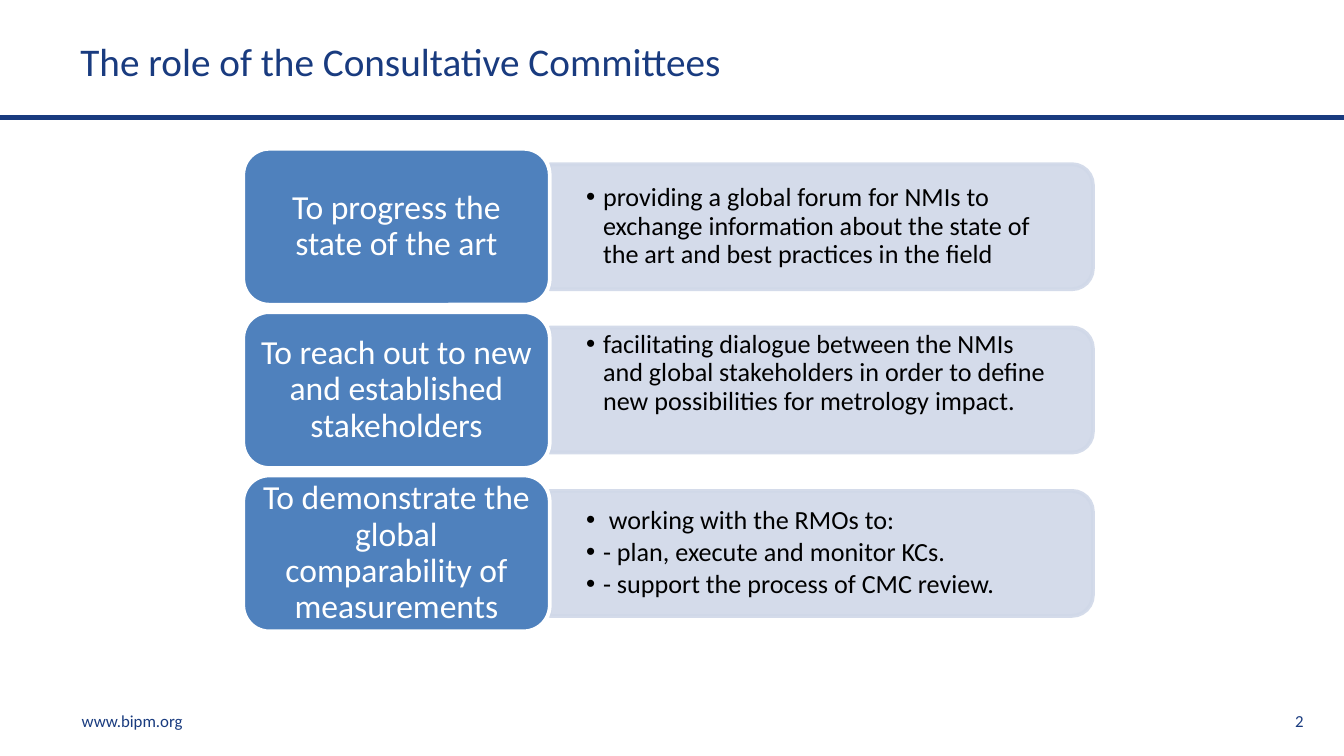
from lxml import etree
from pptx import Presentation
from pptx.dml.color import RGBColor
from pptx.enum import shapes, text
from pptx.oxml import ns
from pptx.util import Pt

NAVY = RGBColor(0x19, 0x3B, 0x7F)
BLUE = RGBColor(0x4F, 0x81, 0xBD)
PALE = RGBColor(0xD0, 0xD8, 0xE8)
WHITE = RGBColor(0xFF, 0xFF, 0xFF)
BLACK = RGBColor(0x00, 0x00, 0x00)

LEFT, CENTER, RIGHT = text.PP_ALIGN.LEFT, text.PP_ALIGN.CENTER, text.PP_ALIGN.RIGHT
DEFAULT_INSETS = (7.2, 3.6, 7.2, 3.6)
DETAIL_INSETS = (19.6, 10, 19.6, 10)
RAISED_INSETS = (19.6, 0, 19.6, 18)

ROWS = [
    ("To progress the state of the art",
     ["providing a global forum for NMIs to exchange information about "
      "the state of the art and best practices in the field"],
     DETAIL_INSETS),
    ("To reach out to new and established stakeholders",
     ["facilitating dialogue between the NMIs and global stakeholders "
      "in order to define new possibilities for metrology impact."],
     RAISED_INSETS),
    ("To demonstrate the global comparability of measurements",
     [" working with the RMOs to:",
      "- plan, execute and monitor KCs.",
      "- support the process of CMC review."],
     DETAIL_INSETS),
]
FIRST_CENTER, ROW_PITCH = 121.5, 87.5
HEAD_LEFT, HEAD_WIDTH, HEAD_HEIGHT = 130.3, 164.2, 83.5
HEAD_PADDING = 4.1
PANEL_LEFT, PANEL_WIDTH, PANEL_HEIGHT = 294.5, 291, 67
DETAIL_WIDTH, DETAIL_HEIGHT = 288, 60.5


def add_element(parent, tag, **attributes):
    return etree.SubElement(parent, ns.qn(tag), attributes)


class Deck:
    font = "Calibri"

    def __init__(self, slide):
        self.slide = slide

    def rule(self, y, width):
        line = self.slide.shapes.add_connector(
            shapes.MSO_CONNECTOR.STRAIGHT, 0, Pt(y), Pt(width), Pt(y))
        line.line.color.rgb = NAVY
        line.line.width = Pt(2.25)
        add_element(line._element.spPr, "a:effectLst")

    def block(self, kind, box, fill, outline, opacity=None):
        shape = self.slide.shapes.add_shape(kind, *map(Pt, box))
        shape.shadow.inherit = False
        shape.fill.solid()
        shape.fill.fore_color.rgb = fill
        shape.line.color.rgb = outline
        shape.line.width = Pt(2)
        if opacity:
            for color in shape._element.spPr.iter(ns.qn("a:srgbClr")):
                add_element(color, "a:alpha", val=str(opacity * 1000))
        return shape

    def label(self, box, lines, size, color, align=LEFT, insets=DEFAULT_INSETS,
              line_spacing=None, space_after=0, bulleted=False):
        frame = self.slide.shapes.add_textbox(*map(Pt, box)).text_frame
        frame.word_wrap = True
        frame.vertical_anchor = text.MSO_ANCHOR.MIDDLE
        (frame.margin_left, frame.margin_top,
         frame.margin_right, frame.margin_bottom) = map(Pt, insets)
        for index, line in enumerate(lines):
            paragraph = frame.add_paragraph() if index else frame.paragraphs[0]
            paragraph.alignment = align
            paragraph.line_spacing = line_spacing
            paragraph.space_after = Pt(space_after)
            if bulleted:
                self.bullet(paragraph)
            run = paragraph.add_run()
            run.text = line
            run.font.name = self.font
            run.font.size = Pt(size)
            run.font.color.rgb = color

    def bullet(self, paragraph):
        properties = paragraph._p.get_or_add_pPr()
        properties.set("marL", str(Pt(9)))
        properties.set("indent", str(Pt(-9)))
        add_element(properties, "a:buFont", typeface="Arial")
        add_element(properties, "a:buChar", char="•")

    def row(self, center, heading, details, insets):
        """Draw one heading block with its detail panel, centred on a height."""
        # The panel is an upright shape turned so its round corners face right.
        panel = self.block(
            shapes.MSO_SHAPE.ROUND_2_SAME_RECTANGLE,
            (PANEL_LEFT + (PANEL_WIDTH - PANEL_HEIGHT) / 2,
             center - PANEL_WIDTH / 2, PANEL_HEIGHT, PANEL_WIDTH),
            PALE, PALE, opacity=90)
        panel.rotation = 90
        self.label((PANEL_LEFT, center - DETAIL_HEIGHT / 2, DETAIL_WIDTH, DETAIL_HEIGHT),
                   details, 14, BLACK, insets=insets,
                   line_spacing=0.9, space_after=2, bulleted=True)

        top = center - HEAD_HEIGHT / 2
        self.block(shapes.MSO_SHAPE.ROUNDED_RECTANGLE,
                   (HEAD_LEFT, top, HEAD_WIDTH, HEAD_HEIGHT), BLUE, WHITE)
        self.label((HEAD_LEFT + HEAD_PADDING, top + HEAD_PADDING,
                    HEAD_WIDTH - 2 * HEAD_PADDING, HEAD_HEIGHT - 2 * HEAD_PADDING),
                   [heading], 18, WHITE, CENTER, (5.4, 2.7, 5.4, 2.7), line_spacing=0.9)


def main():
    presentation = Presentation()
    presentation.slide_width, presentation.slide_height = Pt(720), Pt(405)
    deck = Deck(presentation.slides.add_slide(presentation.slide_layouts[6]))

    deck.rule(63, 720)
    deck.label((569.5, 377.3, 136, 18), ["2"], 9, NAVY, RIGHT)
    deck.label((36.7, 377.3, 136, 18), ["www.bipm.org"], 9, NAVY)
    deck.label((36, 2.5, 648, 60.5), ["The role of the Consultative Committees"], 21, NAVY)
    for index, row in enumerate(ROWS):
        deck.row(FIRST_CENTER + index * ROW_PITCH, *row)

    presentation.save("out.pptx")


if __name__ == "__main__":
    main()
